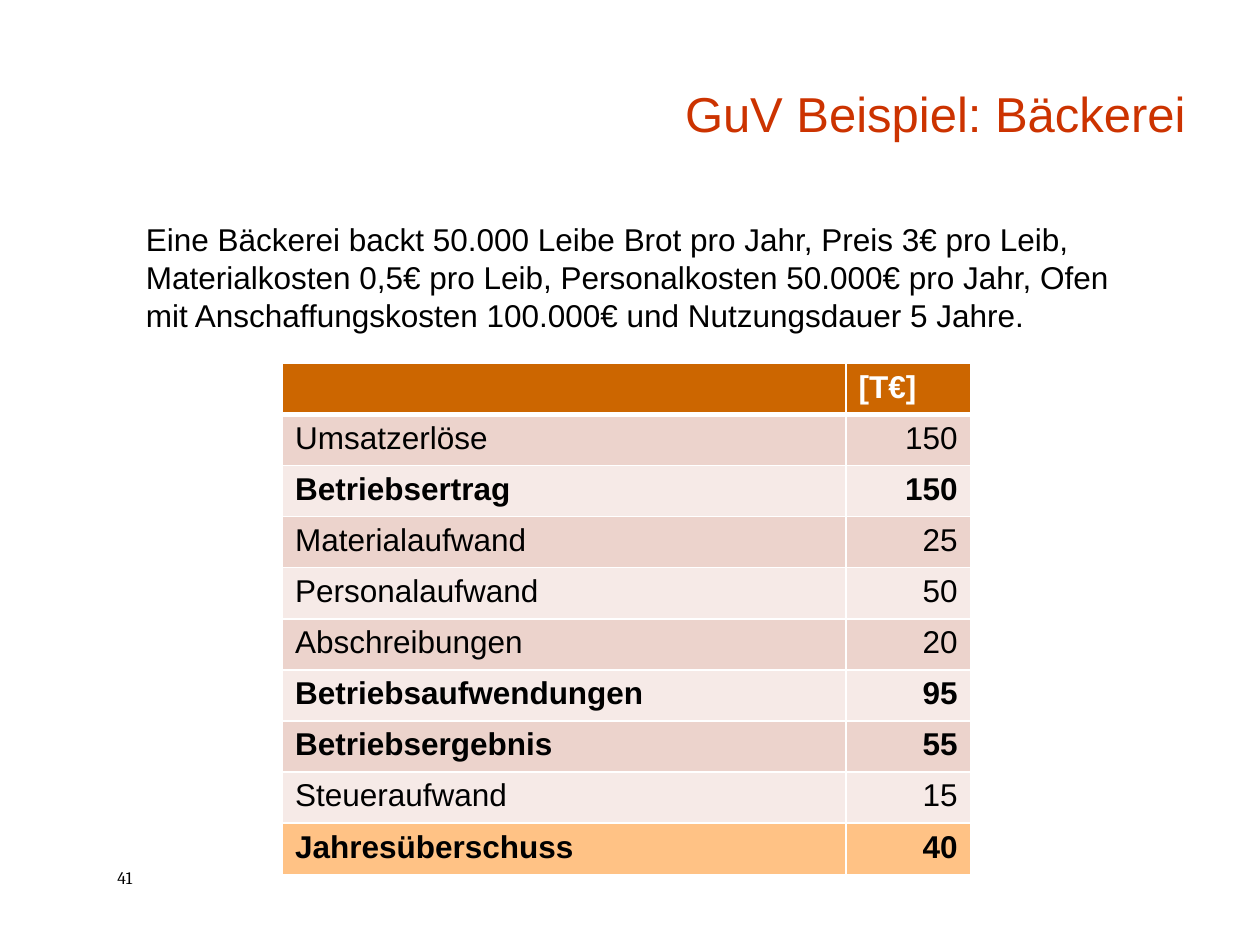
from pptx import Presentation
from pptx.dml.color import RGBColor
from pptx.enum.text import MSO_ANCHOR, MSO_AUTO_SIZE, PP_ALIGN
from pptx.oxml import parse_xml
from pptx.oxml.ns import nsdecls
from pptx.util import Pt

COLORS = {
    "title": "CC3300",
    "text": "000000",
    "white": "FFFFFF",
    "header": "CC6600",
    "odd": "ECD3CC",
    "even": "F6EAE7",
    "result": "FFC285",
}

ROWS = [
    ("Umsatzerlöse", "150", False),
    ("Betriebsertrag", "150", True),
    ("Materialaufwand", "25", False),
    ("Personalaufwand", "50", False),
    ("Abschreibungen", "20", False),
    ("Betriebsaufwendungen", "95", True),
    ("Betriebsergebnis", "55", True),
    ("Steueraufwand", "15", False),
    ("Jahresüberschuss", "40", True),
]


def put_text(tf, text, size=18, font="Arial", color="text", bold=False, align=PP_ALIGN.LEFT):
    p = tf.paragraphs[0]
    p.alignment = align
    r = p.add_run()
    r.text = text
    r.font.size = Pt(size)
    r.font.name = font
    r.font.bold = bold
    r.font.color.rgb = RGBColor.from_string(COLORS[color])


class SlideBuilder:
    def __init__(self, prs):
        self.s = prs.slides.add_slide(prs.slide_layouts[6])

    def text(self, text, x, y, w, h, anchor=MSO_ANCHOR.TOP, **style):
        tf = self.s.shapes.add_textbox(Pt(x), Pt(y), Pt(w), Pt(h)).text_frame
        tf.word_wrap = True
        tf.auto_size = MSO_AUTO_SIZE.NONE
        tf.vertical_anchor = anchor
        put_text(tf, text, **style)

    def cell(self, cell, text, fill, bottom=0.96, **style):
        cell.fill.solid()
        cell.fill.fore_color.rgb = RGBColor.from_string(COLORS[fill])
        if text:
            put_text(cell.text_frame, text, **style)
        tcPr = cell._tc.get_or_add_tcPr()
        widths = {"lnL": 0.96, "lnR": 0.96, "lnT": 0.96, "lnB": bottom}
        for i, (side, width) in enumerate(widths.items()):
            tcPr.insert(i, parse_xml(
                f'<a:{side} {nsdecls("a")} w="{Pt(width)}"><a:solidFill>'
                f'<a:srgbClr val="{COLORS["white"]}"/></a:solidFill></a:{side}>'))

    def table(self, header, rows, x, y, widths, row_height):
        count = len(rows) + 1
        sp = self.s.shapes.add_table(count, len(widths), Pt(x), Pt(y),
                                     Pt(sum(widths)), Pt(row_height * count))
        table = sp.table
        for column, width in zip(table.columns, widths):
            column.width = Pt(width)
        for row in table.rows:
            row.height = Pt(row_height)
        for c, text in enumerate(header):
            self.cell(table.cell(0, c), text, "header", bottom=3, color="white", bold=True)
        for i, (label, value, bold) in enumerate(rows, 1):
            fill = "result" if i == len(rows) else "odd" if i % 2 else "even"
            self.cell(table.cell(i, 0), label, fill, bold=bold)
            self.cell(table.cell(i, 1), value, fill, bold=bold, align=PP_ALIGN.RIGHT)


def main():
    prs = Presentation()
    prs.slide_width, prs.slide_height = Pt(720), Pt(540)
    b = SlideBuilder(prs)
    b.text("41", 60, 492, 48, 21, size=10, font="Cambria")
    b.text("GuV Beispiel: Bäckerei", 144.5, -8, 540, 93, anchor=MSO_ANCHOR.BOTTOM,
           size=28, color="title", align=PP_ALIGN.RIGHT)
    b.table(("", "[T€]"), ROWS, 161.5, 207.6, (322, 71), 29.2)
    b.text("Eine Bäckerei backt 50.000 Leibe Brot pro Jahr, Preis 3€ pro Leib, "
           "Materialkosten 0,5€ pro Leib, Personalkosten 50.000€ pro Jahr, Ofen "
           "mit Anschaffungskosten 100.000€ und Nutzungsdauer 5 Jahre.",
           76.3, 122.4, 572.4, 72)
    prs.save("out.pptx")


if __name__ == "__main__":
    main()
